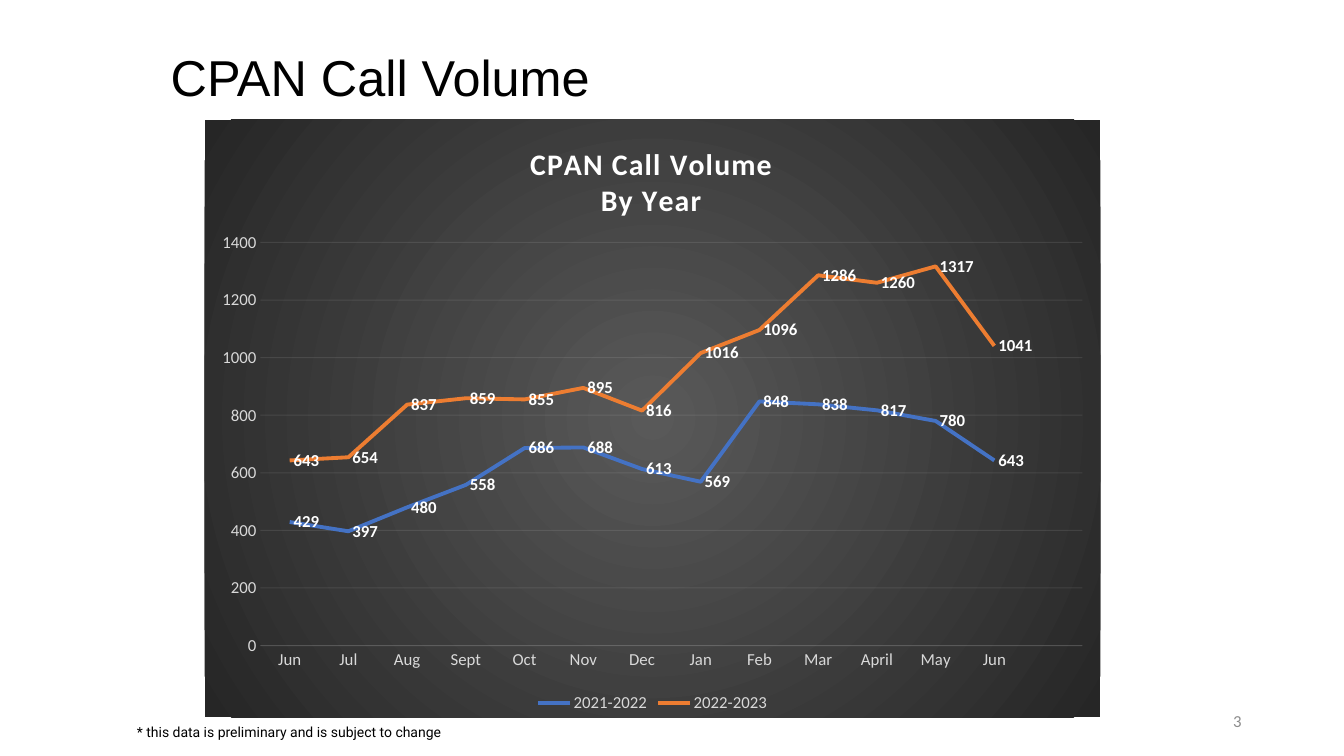
import dataclasses
import typing

import lxml.etree
import pptx
import pptx.chart.data
import pptx.dml.color
import pptx.enum.chart
import pptx.enum.text
import pptx.oxml
import pptx.oxml.ns
import pptx.util

SCALE = 9525
Rgb = pptx.dml.color.RGBColor.from_string
Pt = pptx.util.Pt
Align = pptx.enum.text.PP_ALIGN
Anchor = pptx.enum.text.MSO_ANCHOR
Auto = pptx.enum.text.MSO_AUTO_SIZE
qn = pptx.oxml.ns.qn


@dataclasses.dataclass(frozen=True)
class Theme:
    ink: str = "000000"
    white: str = "FFFFFF"
    pale: str = "D9D9D9"
    grid: str = "F2F2F2"
    page: str = "8C8C8C"
    core: str = "595959"
    edge: str = "262626"
    blue: str = "4472C4"
    orange: str = "ED7D31"
    title: float = 36
    head: float = 21.3
    label: float = 12
    note: float = 10
    sans: str = "Arial"
    plain: str = "Calibri"
    small: str = "Roboto"


@dataclasses.dataclass(frozen=True)
class Box:
    left: int
    top: int
    width: int
    height: int

    def emu(self) -> list[int]:
        return [side * SCALE for side in dataclasses.astuple(self)]


@dataclasses.dataclass(frozen=True)
class Label:
    text: str
    box: Box
    size: float
    face: str
    color: str
    para: dict[str, typing.Any]
    frame: dict[str, typing.Any]


@dataclasses.dataclass(frozen=True)
class Year:
    name: str
    color: str
    calls: tuple[int | None, ...]


LOOK = Theme()
SLIDE = Box(0, 0, 1280, 720)
CHART = Box(195, 114, 853, 569)
PLOT = Box(248, 231, 783, 384)
HEAD = Box(502, 135, 0, 0)

TITLE = Label("CPAN Call Volume", Box(153, 46, 1068, 136), LOOK.title, LOOK.sans, LOOK.ink,
              {"alignment": Align.LEFT, "line_spacing": 0.9},
              {"vertical_anchor": Anchor.TOP, "auto_size": Auto.NONE})
NOTES = (
    Label("3", Box(904, 667, 288, 38), LOOK.label, LOOK.plain, LOOK.page,
          {"alignment": Align.RIGHT}, {"vertical_anchor": Anchor.MIDDLE}),
    Label("* this data is preliminary and is subject to change", Box(121, 684, 380, 26),
          LOOK.note, LOOK.small, LOOK.ink, {"alignment": Align.LEFT},
          {"auto_size": Auto.SHAPE_TO_FIT_TEXT}),
)
MONTHS = ("Jun", "Jul", "Aug", "Sept", "Oct", "Nov", "Dec",
          "Jan", "Feb", "Mar", "April", "May", "Jun", "")
YEARS = (
    Year("2021-2022", LOOK.blue,
         (429, 397, 480, 558, 686, 688, 613, 569, 848, 838, 817, 780, 643, None)),
    Year("2022-2023", LOOK.orange,
         (643, 654, 837, 859, 855, 895, 816, 1016, 1096, 1286, 1260, 1317, 1041, None)),
)


def apply(target: typing.Any, values: dict[str, typing.Any]) -> None:
    for name, value in values.items():
        setattr(target, name, value)


def style(font: typing.Any, size: float, face: str, color: str, bold: bool = False) -> None:
    apply(font, {"size": Pt(size), "name": face, "bold": bold})
    font.color.rgb = Rgb(color)


def stroke(line: typing.Any, color: str, width: float) -> None:
    line.color.rgb = Rgb(color)
    line.width = Pt(width)


def write(shape: typing.Any, label: Label) -> None:
    apply(shape, dict(zip(("left", "top", "width", "height"), label.box.emu())))
    frame = shape.text_frame
    apply(frame, {"word_wrap": True, "text": label.text, **label.frame})
    para = frame.paragraphs[0]
    apply(para, label.para)
    style(para.runs[0].font, label.size, label.face, label.color)


def place(parent: typing.Any, index: int, box: Box, inner: bool) -> None:
    for old in parent.findall(qn("c:layout")):
        parent.remove(old)
    layout = lxml.etree.Element(qn("c:layout"))
    manual = lxml.etree.SubElement(layout, qn("c:manualLayout"))
    parts: dict[str, typing.Any] = {"layoutTarget": "inner"} if inner else {}
    parts |= {"xMode": "edge", "yMode": "edge",
              "x": (box.left - CHART.left) / CHART.width,
              "y": (box.top - CHART.top) / CHART.height}
    if inner:
        parts |= {"w": box.width / CHART.width, "h": box.height / CHART.height}
    for tag, value in parts.items():
        lxml.etree.SubElement(manual, qn(f"c:{tag}")).set("val", str(value))
    parent.insert(index, layout)


def shade(root: typing.Any) -> None:
    names = pptx.oxml.ns.nsdecls("c", "a")
    stops = "".join(f'<a:gs pos="{pos}"><a:srgbClr val="{color}"/></a:gs>'
                    for pos, color in ((0, LOOK.core), (100000, LOOK.edge)))
    fill = pptx.oxml.parse_xml(
        f'<c:spPr {names}><a:gradFill><a:gsLst>{stops}</a:gsLst><a:path path="circle">'
        '<a:fillToRect l="50000" t="50000" r="50000" b="50000"/></a:path></a:gradFill>'
        '<a:ln><a:noFill/></a:ln></c:spPr>')
    root.find(qn("c:chart")).addnext(fill)
    for color in root.iter(qn("a:srgbClr")):
        if color.get("val") == LOOK.grid:
            lxml.etree.SubElement(color, qn("a:alpha")).set("val", "10000")


def entitle(chart: typing.Any) -> None:
    chart.has_title = True
    frame = chart.chart_title.text_frame
    frame.text = "CPAN Call Volume\nBy Year"
    for para in frame.paragraphs:
        para.alignment = Align.CENTER
        font = para.runs[0].font
        style(font, LOOK.head, LOOK.plain, LOOK.white, True)
        para.runs[0]._r.get_or_add_rPr().set("spc", "100")
    chart.chart_title.include_in_layout = False


def draw(slide: typing.Any) -> None:
    kinds = pptx.enum.chart
    data = pptx.chart.data.CategoryChartData()
    data.categories = MONTHS
    for year in YEARS:
        data.add_series(year.name, year.calls)
    chart = slide.shapes.add_chart(kinds.XL_CHART_TYPE.LINE, *CHART.emu(), data).chart
    style(chart.font, LOOK.note, LOOK.plain, LOOK.ink)
    entitle(chart)
    chart.has_legend = True
    apply(chart.legend, {"position": kinds.XL_LEGEND_POSITION.BOTTOM, "include_in_layout": False})
    style(chart.legend.font, LOOK.label, LOOK.plain, LOOK.pale)
    months, calls = chart.category_axis, chart.value_axis
    for axis in (months, calls):
        apply(axis, {"major_tick_mark": kinds.XL_TICK_MARK.NONE,
                     "minor_tick_mark": kinds.XL_TICK_MARK.NONE})
        style(axis.tick_labels.font, LOOK.label, LOOK.plain, LOOK.pale)
    apply(calls, {"minimum_scale": 0, "maximum_scale": 1400, "major_unit": 200,
                  "has_major_gridlines": True})
    calls.format.line.fill.background()
    for line in (months.format.line, calls.major_gridlines.format.line):
        stroke(line, LOOK.grid, 0.75)
    chart.plots[0].vary_by_categories = False
    for year, series in zip(YEARS, chart.plots[0].series):
        series.smooth = False
        series.marker.style = kinds.XL_MARKER_STYLE.NONE
        stroke(series.format.line, year.color, 2.75)
        apply(series.data_labels, {"show_value": True,
                                   "position": kinds.XL_LABEL_POSITION.RIGHT})
        style(series.data_labels.font, LOOK.label, LOOK.plain, LOOK.white, True)
    root = chart._chartSpace
    place(root.find(f".//{qn('c:plotArea')}"), 0, PLOT, True)
    place(root.find(f"{qn('c:chart')}/{qn('c:title')}"), 1, HEAD, False)
    shade(root)


def main() -> None:
    deck = pptx.Presentation()
    apply(deck, {"slide_width": SLIDE.width * SCALE, "slide_height": SLIDE.height * SCALE})
    slide = deck.slides.add_slide(deck.slide_layouts[5])
    write(slide.shapes.title, TITLE)
    draw(slide)
    for note in NOTES:
        write(slide.shapes.add_textbox(*note.box.emu()), note)
    deck.save("out.pptx")


if __name__ == "__main__":
    main()
